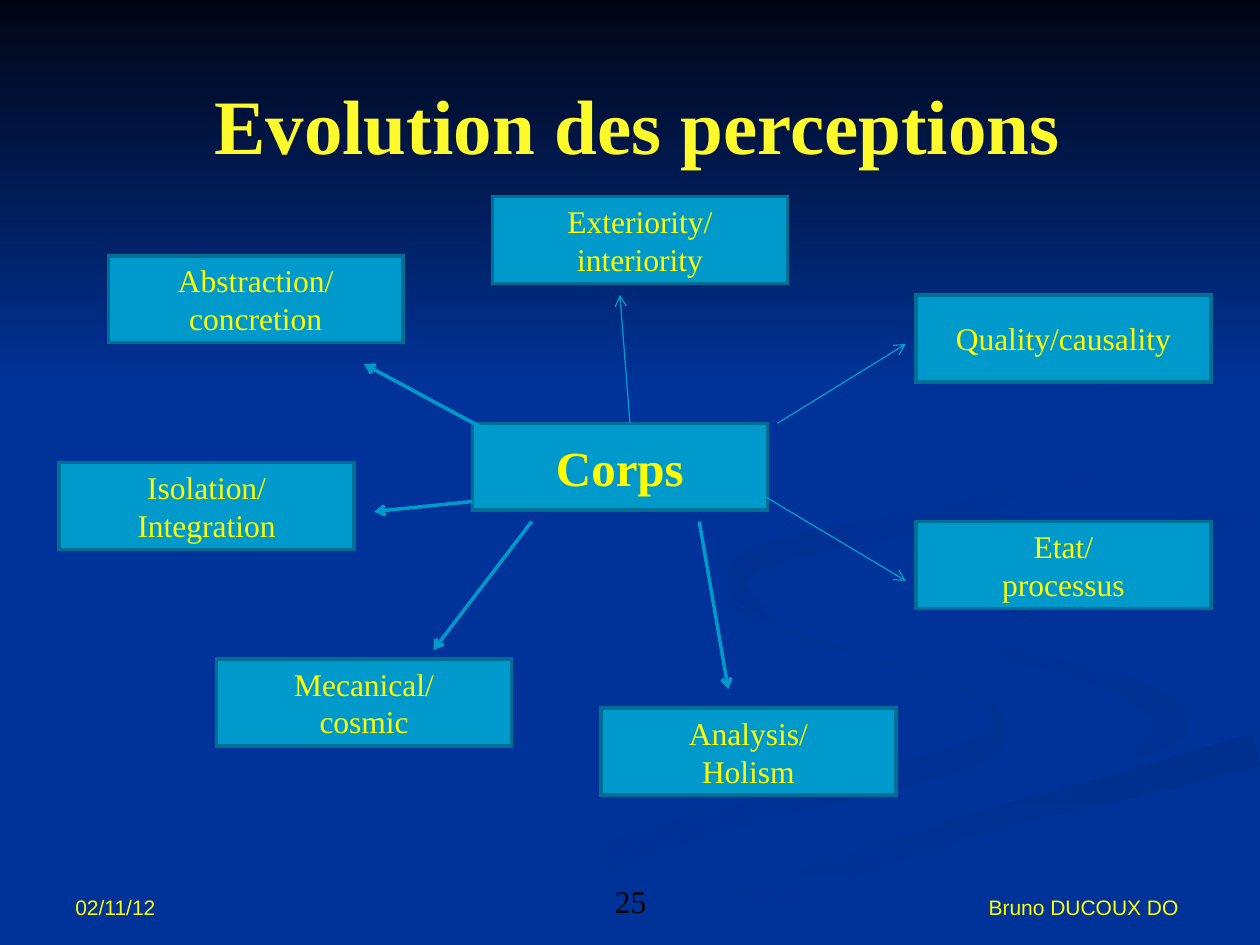
from math import hypot
from typing import NamedTuple

from lxml.etree import SubElement
from pptx import Presentation
from pptx.dml.color import RGBColor
from pptx.enum.shapes import MSO_CONNECTOR as Connector, MSO_SHAPE as Shape
from pptx.enum.text import MSO_ANCHOR as Anchor, PP_ALIGN as Align
from pptx.oxml.ns import qn
from pptx.util import Inches, Pt

NAVY = RGBColor(0x00, 0x33, 0x99)
MIDNIGHT = RGBColor(0x00, 0x05, 0x14)
SHADE = RGBColor(0x00, 0x2F, 0x8D)
SOFT_SHADE = RGBColor(0x00, 0x31, 0x93)
CYAN = RGBColor(0x00, 0x99, 0xCC)
TEAL = RGBColor(0x00, 0x6F, 0x95)
YELLOW = RGBColor(0xFF, 0xFF, 0x00)
TITLE_YELLOW = RGBColor(0xFF, 0xFA, 0x2C)
BLACK = RGBColor(0, 0, 0)
SERIF, SANS = "Times New Roman", "Arial"

SLIDE_WIDTH, SLIDE_HEIGHT = 10, 7.5
BOX_WIDTH, BOX_HEIGHT = 2.34, 0.69
BAND_HEIGHT = 3.08
FOOTER_TOP, FOOTER_HEIGHT = 6.83, 0.52
THIN, THICK = 0.75, 2
STEPS_PER_BEND = 6


class Ribbon(NamedTuple):
    bends: list  # (x, y, thickness)
    first: RGBColor
    last: RGBColor
    angle: int


class Perception(NamedTuple):
    lines: list
    corner: tuple
    arrow_from: tuple
    arrow_to: tuple
    weight: float


RIBBONS = [
    Ribbon([(5.75, 4.6, 0), (5.77, 4.76, 0.05), (6.1, 4.96, 0.05), (6.8, 5.19, 0.02),
            (7.7, 5.5, 0.02), (7.92, 5.78, 0.14), (7.6, 6.02, 0.2), (5.9, 6.46, 0.2),
            (4.6, 6.88, 0.28), (3.3, 7.49, 0.4)], NAVY, SOFT_SHADE, 0),
    Ribbon([(7.24, 4.64, 0), (7.36, 4.87, 0.06), (7.78, 5.11, 0.13), (8.45, 5.3, 0.13),
            (9, 5.48, 0.17), (9.3, 5.75, 0.25), (8.94, 6.05, 0)], NAVY, SOFT_SHADE, 45),
    Ribbon([(5.4, 7.49, 0.4), (6.4, 7.01, 0.22), (7.75, 6.54, 0.18), (8.9, 6.24, 0.22),
            (9.98, 5.95, 0.28)], SHADE, NAVY, 90),
    Ribbon([(9.98, 4.11, 0.18), (9, 4.26, 0.16), (8.25, 4.44, 0.2), (7.93, 4.67, 0.2),
            (8.26, 4.96, 0)], SHADE, NAVY, 45),
    Ribbon([(7.62, 2.33, 0), (8.5, 2.81, 0.03), (8.91, 3.4, 0.06), (8.5, 3.84, 0.13),
            (7.64, 4.07, 0.18), (6.2, 4.37, 0.18), (5.85, 4.64, 0.16), (6.22, 5, 0)],
           SHADE, NAVY, 45),
]
PERCEPTIONS = [
    Perception(["Abstraction/", "concretion"], (0.86, 2.03), (3.91, 3.44), (2.89, 2.89), THICK),
    Perception(["Exteriority/", "interiority"], (3.91, 1.56), (5, 3.36), (4.92, 2.34), THIN),
    Perception(["Quality/causality"], (7.27, 2.34), (6.17, 3.36), (7.19, 2.73), THIN),
    Perception(["Etat/", "processus"], (7.27, 4.14), (6.02, 3.91), (7.19, 4.61), THIN),
    Perception(["Isolation/", "Integration"], (0.47, 3.67), (3.75, 3.98), (2.97, 4.06), THICK),
    Perception(["Mecanical/", "cosmic"], (1.72, 5.23), (4.22, 4.14), (3.44, 5.16), THICK),
    Perception(["Analysis/", "Holism"], (4.77, 5.62), (5.55, 4.14), (5.78, 5.47), THICK),
]


def blend(before, start, end, after, t):
    return (start + t * (end - before) / 2
            + t**2 * (2 * before - 5 * start + 4 * end - after) / 2
            + t**3 * (3 * (start - end) + after - before) / 2)


def smooth_spine(bends):
    padded = [bends[0], *bends, bends[-1]]
    spine = [
        tuple(blend(*values, step / STEPS_PER_BEND) for values in zip(*window))
        for window in zip(padded, padded[1:], padded[2:], padded[3:])
        for step in range(STEPS_PER_BEND)
    ]
    return [*spine, bends[-1]]


def ribbon_outline(bends):
    spine = smooth_spine(bends)
    left, right = [], []
    for before, (x, y, thickness), after in zip(
            [spine[0], *spine], spine, [*spine[1:], spine[-1]]):
        dx, dy = after[0] - before[0], after[1] - before[1]
        reach = max(thickness, 0) / 2 / hypot(dx, dy)
        for edge, side in ((left, reach), (right, -reach)):
            edge.append((min(x - dy * side, SLIDE_WIDTH), min(y + dx * side, SLIDE_HEIGHT)))
    return left + right[::-1]


def fill_gradient(shape, first, last, angle):
    shape.shadow.inherit = False
    shape.line.fill.background()
    shape.fill.gradient()
    shape.fill.gradient_angle = -angle % 360
    for stop, color, position in zip(shape.fill.gradient_stops, (first, last), (0, 1)):
        stop.color.rgb = color
        stop.position = position


def add_ribbon(slide, ribbon):
    start, *rest = [(Inches(x), Inches(y)) for x, y in ribbon_outline(ribbon.bends)]
    builder = slide.shapes.build_freeform(*start, scale=1.0)
    builder.add_line_segments(rest, close=True)
    fill_gradient(builder.convert_to_shape(), ribbon.first, ribbon.last, ribbon.angle)


def add_night_band(slide):
    band = slide.shapes.add_shape(
        Shape.RECTANGLE, 0, 0, Inches(SLIDE_WIDTH), Inches(BAND_HEIGHT))
    fill_gradient(band, MIDNIGHT, NAVY, 90)


def write(holder, lines, size, color=YELLOW, face=SERIF, bold=False,
          align=Align.CENTER, anchor=Anchor.MIDDLE):
    frame = holder.text_frame
    frame.word_wrap = True
    frame.vertical_anchor = anchor
    frame.text = "\n".join(lines)
    for paragraph in frame.paragraphs:
        paragraph.alignment = align
        font = paragraph.font
        font.size, font.name, font.bold = Pt(size), face, bold
        font.color.rgb = color


def add_label(slide, left, top, width, height, text, size, **style):
    label = slide.shapes.add_textbox(*map(Inches, (left, top, width, height)))
    write(label, [text], size, **style)


def add_footer(slide, left, width, text, size, **style):
    add_label(slide, left, FOOTER_TOP, width, FOOTER_HEIGHT, text, size,
              anchor=Anchor.BOTTOM, **style)


def add_box(slide, corner, lines, size=18, bold=False):
    box = slide.shapes.add_shape(
        Shape.RECTANGLE, *map(Inches, (*corner, BOX_WIDTH, BOX_HEIGHT)))
    box.shadow.inherit = False
    box.fill.solid()
    box.fill.fore_color.rgb = CYAN
    box.line.color.rgb = TEAL
    box.line.width = Pt(2)
    SubElement(box.line._get_or_add_ln(), qn("a:miter"), lim="800000")
    write(box, lines, size, bold=bold)


def add_arrow(slide, start, end, weight):
    arrow = slide.shapes.add_connector(Connector.STRAIGHT, *map(Inches, (*start, *end)))
    arrow.line.color.rgb = CYAN
    arrow.line.width = Pt(weight)
    SubElement(arrow.line._get_or_add_ln(), qn("a:tailEnd"), type="arrow")
    SubElement(arrow._element.spPr, qn("a:effectLst"))


def main():
    deck = Presentation()
    deck.slide_width, deck.slide_height = Inches(SLIDE_WIDTH), Inches(SLIDE_HEIGHT)
    slide = deck.slides.add_slide(deck.slide_layouts[6])
    slide.background.fill.solid()
    slide.background.fill.fore_color.rgb = NAVY
    for ribbon in RIBBONS:
        add_ribbon(slide, ribbon)
    add_night_band(slide)

    add_label(slide, 1.22, 0.36, 7.68, 1.25, "Evolution des perceptions", 44,
              color=TITLE_YELLOW, bold=True)
    add_footer(slide, 0.5, 2.33, "02/11/12", 12, face=SANS, align=Align.LEFT)
    add_footer(slide, 7.17, 2.33, "Bruno DUCOUX DO ", 12, face=SANS, align=Align.RIGHT)
    add_footer(slide, 3.42, 3.17, "25", 18, color=BLACK)

    add_box(slide, (3.75, 3.36), ["Corps"], size=28, bold=True)
    for perception in PERCEPTIONS:
        add_box(slide, perception.corner, perception.lines)
        add_arrow(slide, perception.arrow_from, perception.arrow_to, perception.weight)
    deck.save("out.pptx")


if __name__ == "__main__":
    main()
